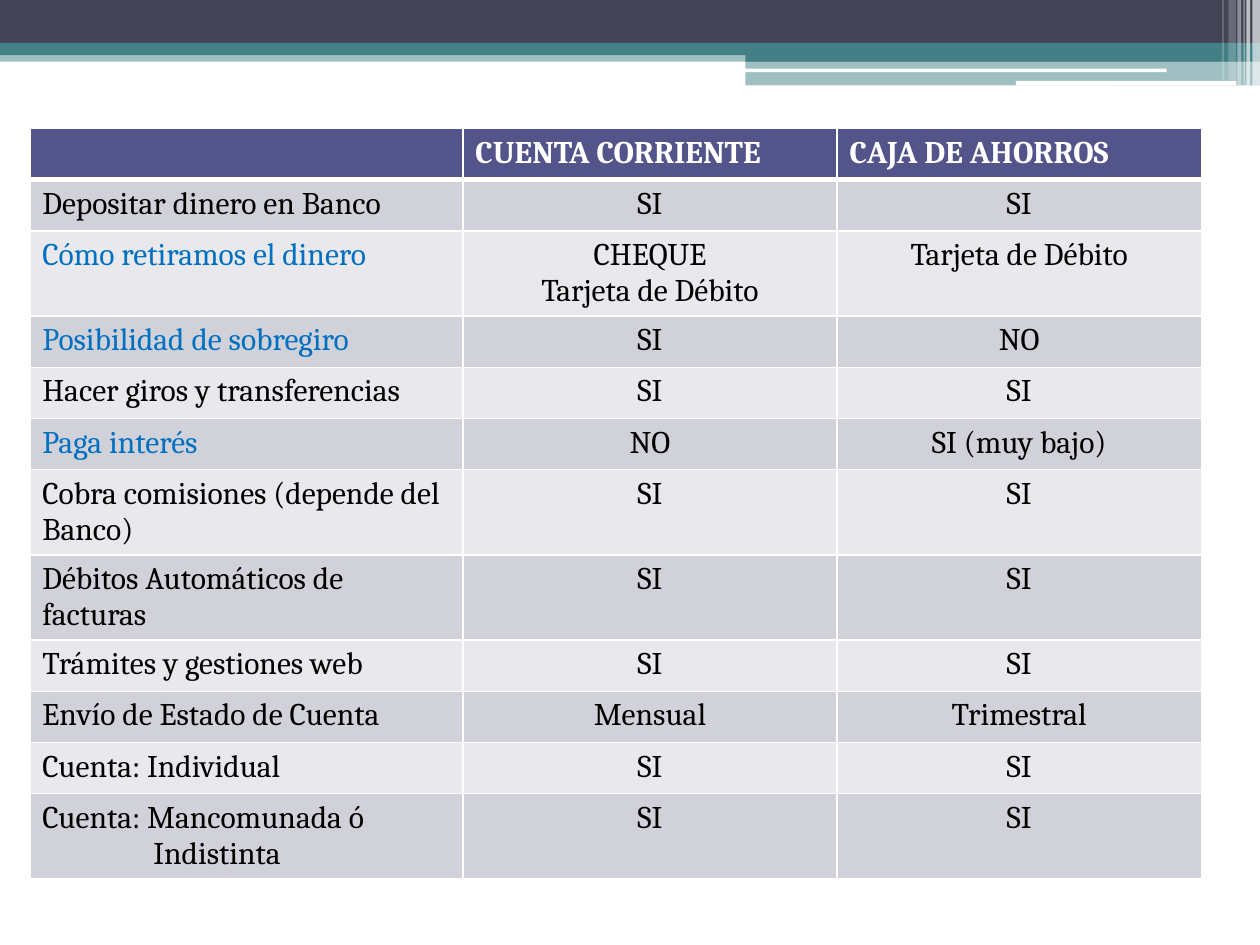
from dataclasses import dataclass

import lxml.etree
import pptx
import pptx.dml.color
import pptx.enum.shapes
import pptx.enum.text
import pptx.oxml.ns
import pptx.util

Pt = pptx.util.Pt
RGBColor = pptx.dml.color.RGBColor
SHAPE = pptx.enum.shapes.MSO_SHAPE
ALIGN = pptx.enum.text.PP_ALIGN
qn = pptx.oxml.ns.qn

SLATE = RGBColor(0x42, 0x44, 0x56)
TEAL = RGBColor(0x43, 0x80, 0x86)
WHITE = RGBColor(0xFF, 0xFF, 0xFF)
BLACK = RGBColor(0x00, 0x00, 0x00)
BLUE = RGBColor(0x00, 0x70, 0xC0)
HEADER = RGBColor(0x53, 0x54, 0x8A)
BAND_DARK = RGBColor(0xD1, 0xD1, 0xDA)
BAND_LIGHT = RGBColor(0xE9, 0xE9, 0xED)

FONT = "Cambria"
TEXT_SIZE = 18
ROW_HEIGHT = 29.2
COLUMN_WIDTHS = (247.5, 213.8, 208.2)
THIN, THICK = 1, 3


@dataclass
class Bar:
    left: float
    top: float
    width: float
    height: float
    color: RGBColor
    opacity: int = 100
    rounded: bool = False


@dataclass
class Feature:
    name: str
    checking: str
    savings: str
    color: RGBColor = BLACK
    second_line_indent: float = 0


BARS = [
    # Bands across the top
    Bar(0, 28.8, 720, 6.5, TEAL, 50),
    Bar(0, 0, 720, 24.5, SLATE),
    Bar(0, 24.5, 720, 7, TEAL),
    Bar(426, 28.2, 294, 7, TEAL),
    Bar(426, 34.8, 294, 14, TEAL, 50),
    # White strips
    Bar(425.5, 39.2, 241.2, 2, WHITE, rounded=True),
    Bar(580.5, 46.3, 126, 2.6, WHITE, rounded=True),
    # Vertical stripes at the right edge
    Bar(715.6, 0, 4.4, 49, WHITE, 65),
    Bar(712.2, 0, 2.2, 49, WHITE, 65),
    Bar(710.6, 0, 0.7, 49, WHITE, 60),
    Bar(707.1, 0, 2.2, 49, WHITE, 40),
    Bar(702, 0, 4.3, 46, WHITE, 20),
    Bar(698.5, 0, 0.7, 46, WHITE, 30),
]

HEADINGS = ("", "CUENTA CORRIENTE", "CAJA DE AHORROS")
FEATURES = [
    Feature("Depositar dinero en Banco", "SI", "SI"),
    Feature("Cómo retiramos el dinero", "CHEQUE\nTarjeta de Débito", "Tarjeta de Débito", BLUE),
    Feature("Posibilidad de sobregiro", "SI", "NO", BLUE),
    Feature("Hacer giros y transferencias", "SI", "SI"),
    Feature("Paga interés", "NO", "SI (muy bajo)", BLUE),
    Feature("Cobra comisiones (depende del Banco)", "SI", "SI"),
    Feature("Débitos Automáticos de facturas", "SI", "SI"),
    Feature("Trámites y gestiones web", "SI", "SI"),
    Feature("Envío de Estado de Cuenta", "Mensual", "Trimestral"),
    Feature("Cuenta: Individual", "SI", "SI"),
    Feature("Cuenta: Mancomunada ó\nIndistinta", "SI", "SI", second_line_indent=63.4),
]


def draw_bar(slide: pptx.slide.Slide, bar: Bar) -> None:
    kind = SHAPE.ROUNDED_RECTANGLE if bar.rounded else SHAPE.RECTANGLE
    strip = slide.shapes.add_shape(kind, Pt(bar.left), Pt(bar.top), Pt(bar.width), Pt(bar.height))
    strip.shadow.inherit = False
    strip.line.fill.background()
    strip.fill.solid()
    strip.fill.fore_color.rgb = bar.color
    if bar.opacity < 100:
        color = strip.fill._xPr.find(qn("a:solidFill"))[0]
        lxml.etree.SubElement(color, qn("a:alpha"), val=str(bar.opacity * 1000))


def set_borders(cell: pptx.table._Cell, top: int, bottom: int) -> None:
    properties = cell._tc.get_or_add_tcPr()
    for side, width in (("L", THIN), ("R", THIN), ("T", top), ("B", bottom)):
        border = lxml.etree.SubElement(properties, qn(f"a:ln{side}"), w=str(Pt(width)))
        fill = lxml.etree.SubElement(border, qn("a:solidFill"))
        lxml.etree.SubElement(fill, qn("a:srgbClr"), val=str(WHITE))


def fill_cell(cell: pptx.table._Cell, text: str, background: RGBColor, color: RGBColor,
              align: ALIGN = ALIGN.LEFT, bold: bool = False) -> None:
    cell.fill.solid()
    cell.fill.fore_color.rgb = background
    cell.text_frame.text = text
    for paragraph in cell.text_frame.paragraphs:
        paragraph.alignment = align
        paragraph.font.size = Pt(TEXT_SIZE)
        for run in paragraph.runs:
            run.font.name = FONT
            run.font.size = Pt(TEXT_SIZE)
            run.font.bold = bold
            run.font.color.rgb = color


def draw_comparison(slide: pptx.slide.Slide) -> None:
    row_count = len(FEATURES) + 1
    comparison = slide.shapes.add_table(
        row_count, len(HEADINGS), Pt(17), Pt(73.5),
        Pt(sum(COLUMN_WIDTHS)), Pt(ROW_HEIGHT * row_count)).table
    for column, width in zip(comparison.columns, COLUMN_WIDTHS):
        column.width = Pt(width)
    for index, row in enumerate(comparison.rows):
        row.height = Pt(ROW_HEIGHT)
        for cell in row.cells:
            set_borders(cell, THICK if index == 1 else THIN, THICK if index == 0 else THIN)

    # Header row
    for cell, heading in zip(comparison.rows[0].cells, HEADINGS):
        fill_cell(cell, heading, HEADER, WHITE, bold=True)

    # Feature rows, in alternating bands
    for index, feature in enumerate(FEATURES, start=1):
        band = BAND_DARK if index % 2 else BAND_LIGHT
        name, checking, savings = comparison.rows[index].cells
        fill_cell(name, feature.name, band, feature.color)
        fill_cell(checking, feature.checking, band, BLACK, ALIGN.CENTER)
        fill_cell(savings, feature.savings, band, BLACK, ALIGN.CENTER)
        if feature.second_line_indent:
            second_line = name.text_frame.paragraphs[1]
            second_line._p.get_or_add_pPr().set("marL", str(Pt(feature.second_line_indent)))


def main() -> None:
    deck = pptx.Presentation()
    deck.slide_width, deck.slide_height = Pt(720), Pt(540)
    slide = deck.slides.add_slide(deck.slide_layouts[6])
    for bar in BARS:
        draw_bar(slide, bar)
    draw_comparison(slide)
    deck.save("out.pptx")


if __name__ == "__main__":
    main()
